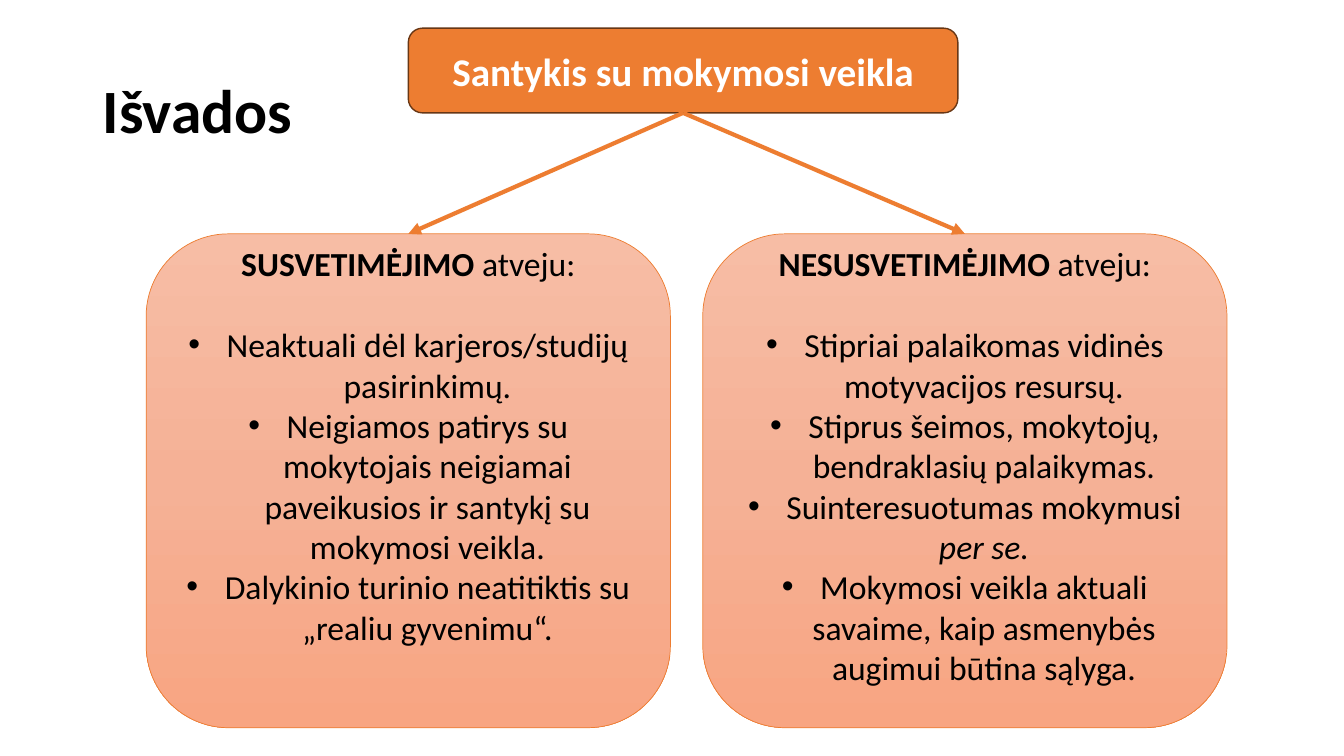
from copy import deepcopy
from dataclasses import dataclass

from lxml.etree import SubElement
from pptx import Presentation
from pptx.dml.color import RGBColor
from pptx.enum.shapes import MSO_CONNECTOR, MSO_SHAPE
from pptx.enum.text import MSO_ANCHOR, PP_ALIGN
from pptx.oxml.ns import qn
from pptx.util import Pt


@dataclass(frozen=True)
class Theme:
    """Colours, font and type sizes."""
    font: str = "Calibri"
    ink: str = "000000"
    light: str = "FFFFFF"
    accent: str = "ED7D31"
    edge: str = "683715"
    fade: tuple = ("F7BDA5", "F5B196", "F8A582")
    title: int = 44
    topic: int = 28
    body: int = 24
    gap: int = 29


def px(n):
    """Turn px into EMU, with 100 px to the inch."""
    return n * 9144


def rgb(code):
    """Read a hex colour."""
    return RGBColor.from_string(code)


class Board:
    """Draws styled elements on one slide."""

    def __init__(self, slide, theme):
        """Keep the slide and its theme."""
        self.slide, self.theme = slide, theme

    def words(self, para, text, size, color, bold=False, slant=False):
        """Add one run."""
        run = para.add_run()
        run.text = text
        font = run.font
        font.name, font.size = self.theme.font, Pt(size)
        font.bold, font.italic = bold, slant
        font.color.rgb = rgb(color)

    def title(self, text, box):
        """Add the slide title."""
        frame = self.slide.shapes.add_textbox(*map(px, box)).text_frame
        frame.word_wrap = True
        frame.vertical_anchor = MSO_ANCHOR.MIDDLE
        para = frame.paragraphs[0]
        para.line_spacing = 0.9
        self.words(para, text, self.theme.title, self.theme.ink, True)

    def round(self, box, edge, width):
        """Add a rounded box with centred text."""
        shape = self.slide.shapes.add_shape(
            MSO_SHAPE.ROUNDED_RECTANGLE, *map(px, box))
        shape.shadow.inherit = False
        shape.line.color.rgb = rgb(edge)
        shape.line.width = Pt(width)
        frame = shape.text_frame
        frame.word_wrap = True
        frame.vertical_anchor = MSO_ANCHOR.MIDDLE
        frame.paragraphs[0].alignment = PP_ALIGN.CENTER
        return shape

    def topic(self, text, box):
        """Add the solid box at the top."""
        theme = self.theme
        shape = self.round(box, theme.edge, 1)
        shape.fill.solid()
        shape.fill.fore_color.rgb = rgb(theme.accent)
        self.words(shape.text_frame.paragraphs[0], text,
                   theme.topic, theme.light, True)
        return shape

    def shade(self, shape):
        """Fill a shape with the three-stop fade."""
        fill = shape.fill
        fill.gradient()
        fill.gradient_angle = 270
        first = next(shape._element.spPr.iter(qn("a:gs")))
        middle = deepcopy(first)
        middle.set("pos", "50000")
        first.addnext(middle)
        for stop, code in zip(fill.gradient_stops, self.theme.fade):
            stop.color.rgb = rgb(code)

    def bullet(self, para):
        """Give a paragraph a hanging bullet."""
        props = para._p.get_or_add_pPr()
        props.set("marL", str(px(38)))
        props.set("indent", str(-px(38)))
        SubElement(props, qn("a:buFont"), typeface="Arial")
        SubElement(props, qn("a:buChar"), char="•")

    def panel(self, head, items, box, foot):
        """Add a shaded panel with a heading and bullets."""
        theme = self.theme
        shape = self.round(box, theme.accent, 0.5)
        self.shade(shape)
        frame = shape.text_frame
        frame.margin_bottom = px(foot)
        para = frame.paragraphs[0]
        para.space_after = Pt(theme.gap)
        self.words(para, head, theme.body, theme.ink, True)
        self.words(para, " atveju:", theme.body, theme.ink)
        for text, *tail in items:
            para = frame.add_paragraph()
            para.alignment = PP_ALIGN.CENTER
            self.bullet(para)
            self.words(para, text, theme.body, theme.ink)
            for extra in tail:
                self.words(para, extra, theme.body, theme.ink, slant=True)
        return shape

    def arrow(self, start, end):
        """Join the foot of one box to the top of another."""
        link = self.slide.shapes.add_connector(
            MSO_CONNECTOR.STRAIGHT, 0, 0, 0, 0)
        link.begin_connect(start, 2)
        link.end_connect(end, 0)
        link.line.color.rgb = rgb(self.theme.accent)
        link.line.width = Pt(3)
        props = link._element.spPr
        SubElement(props.find(qn("a:ln")), qn("a:tailEnd"), type="triangle")
        SubElement(props, qn("a:effectLst"))


PANELS = [
    ("SUSVETIMĖJIMO", 145, 76, [
        ("Neaktuali dėl karjeros/studijų pasirinkimų.",),
        ("Neigiamos patirys su mokytojais neigiamai paveikusios "
         "ir santykį su mokymosi veikla.",),
        ("Dalykinio turinio neatitiktis su „realiu gyvenimu“.",),
    ]),
    ("NESUSVETIMĖJIMO", 697, 36, [
        ("Stipriai palaikomas vidinės motyvacijos resursų.",),
        ("Stiprus šeimos, mokytojų, bendraklasių palaikymas.",),
        ("Suinteresuotumas mokymusi ", "per se."),
        ("Mokymosi veikla aktuali savaime, kaip asmenybės "
         "augimui būtina sąlyga.",),
    ]),
]


def main():
    """Build and save the slide."""
    deck = Presentation()
    deck.slide_width, deck.slide_height = px(1333), px(750)
    board = Board(deck.slides.add_slide(deck.slide_layouts[6]), Theme())
    board.title("Išvados", (92, 40, 1150, 145))
    cases = [board.panel(head, items, (left, 232, 520, 490), foot)
             for head, left, foot, items in PANELS]
    topic = board.topic("Santykis su mokymosi veikla", (405, 28, 545, 84))
    for case in cases:
        board.arrow(topic, case)
    deck.save("out.pptx")


if __name__ == "__main__":
    main()
